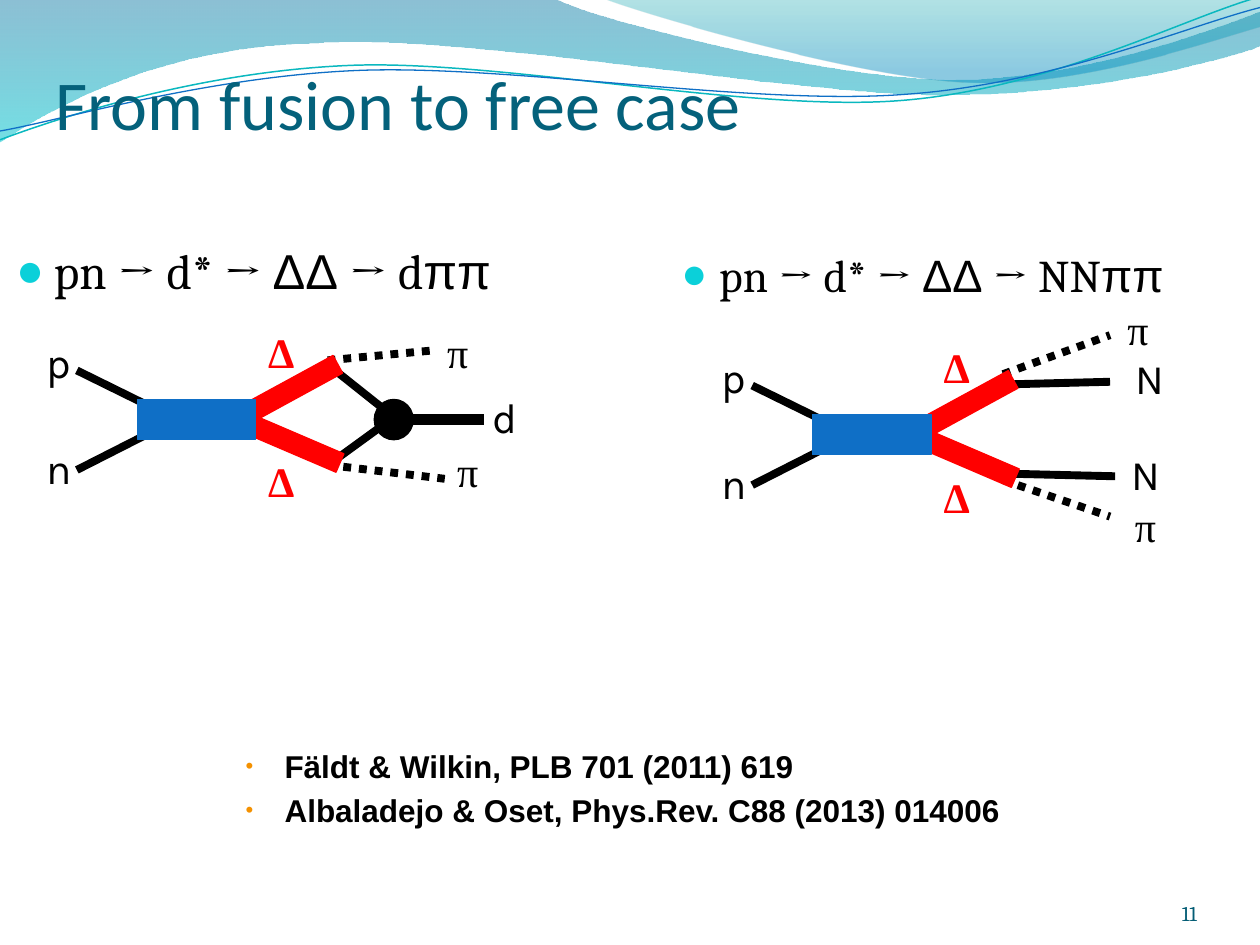
from dataclasses import dataclass

from lxml import etree
from pptx import Presentation
from pptx.dml.color import RGBColor
from pptx.enum.dml import MSO_LINE
from pptx.enum.shapes import MSO_CONNECTOR, MSO_SHAPE
from pptx.enum.text import MSO_ANCHOR, PP_ALIGN
from pptx.oxml.ns import qn
from pptx.util import Inches, Pt

STRAIGHT = MSO_CONNECTOR.STRAIGHT
RECTANGLE, OVAL = MSO_SHAPE.RECTANGLE, MSO_SHAPE.OVAL
DOTTED = MSO_LINE.ROUND_DOT
BOTTOM, TOP = MSO_ANCHOR.BOTTOM, MSO_ANCHOR.TOP
LEFT, RIGHT = PP_ALIGN.LEFT, PP_ALIGN.RIGHT
TITLE_ONLY = 5


@dataclass(frozen=True)
class Theme:
    title: str = "04617B"
    number: str = "045D75"
    ink: str = "000000"
    delta: str = "FF0000"
    vertex: str = "0F6FC6"
    teal: str = "0AB8BF"
    formula_bullet: str = "0BD0D9"
    reference_bullet: str = "F49100"
    heading_font: str = "Calibri"
    body_font: str = "Cambria"
    plain_font: str = "Arial"
    greek_font: str = "Times New Roman"
    particle_font: str = "Karla"
    title_size: float = 40
    label_size: float = 24
    reference_size: float = 18
    number_size: float = 12


THEME = Theme()

# Each wave: start point, then segments of one point (straight) or three (cubic).
WAVE_FILLS = [
    ((0, 0), [((4.4, -0.01),),
              ((4.76, 0.17), (6.64, 0.63), (7.58, 0.63)),
              ((8.53, 0.63), (9.58, 0.26), (10, 0.09)),
              ((10.01, 0.36),),
              ((9.83, 0.44), (8.7, 0.76), (7.46, 0.75)),
              ((6.22, 0.75), (3.82, 0.28), (2.57, 0.34)),
              ((1.29, 0.36), (0.46, 0.83), (-0.01, 1.13))],
     [(0, "0074A1", 45), (1, "00C6CF", 55)]),
    ((4.79, -0.01), [((5.09, 0.11), (6.82, 0.62), (7.69, 0.65)),
                     ((8.56, 0.69), (9.61, 0.32), (10, 0.21)),
                     ((10, 0),)],
     [(0, "00A1A9", 30), (0.8, "008BBF", 45)]),
]
WAVE_LINES = [
    ((0, 1.11), [((0.48, 0.93), (1.58, 0.57), (2.77, 0.52)),
                 ((3.95, 0.47), (5.93, 0.89), (7.13, 0.8)),
                 ((8.33, 0.71), (9.38, 0.15), (9.98, -0.02))], THEME.teal, 0.85),
    ((0, 1.04), [((0.47, 0.96), (1.64, 0.61), (2.83, 0.56)),
                 ((4.03, 0.51), (5.97, 0.84), (7.17, 0.75)),
                 ((8.36, 0.67), (9.41, 0.21), (10, 0.06))], THEME.vertex, 0.75),
]

# Diagram parts, in inches from the diagram's corner.
INCOMING = [(0.34, 0.4, 0.97, 0.71), (0.34, 1.19, 0.97, 0.87)]
DELTA_BARS = [(0.46, -28.6), (0.9, 23.2)]
LABEL_WIDTHS = {"Δ": 0.41, "π": 0.37}
PARTICLE_WIDTH = 0.32
FUSION = {
    "pions": [(2.33, 1.15, 3.26, 1.26), (2.33, 0.32, 3.18, 0.24)],
    "nucleons": [(2.39, 0.4, 2.78, 0.71), (2.39, 1.11, 2.94, 0.71)],
    "labels": [("d", 3.54, 0.52), ("π", 3.26, 0.95), ("π", 3.18, 0)],
}
FREE = {
    "pions": [(2.33, 1.15, 3.18, 1.44), (2.33, 0.31, 3.18, 0)],
    "nucleons": [(2.39, 0.39, 3.18, 0.37), (2.39, 1.1, 3.22, 1.12)],
    "labels": [("π", 3.28, 1.26), ("π", 3.22, -0.3), ("N", 3.25, 0.85), ("N", 3.28, 0.09)],
}


def inches(values):
    return [Inches(value) for value in values]


def write(frame, paragraphs, size, color, bold=False, align=LEFT, space=0, bullet=None):
    """Fill a frame; a paragraph is a list of (text, font), a bullet (char, colour, percent, indent)."""
    for index, spans in enumerate(paragraphs):
        para = frame.paragraphs[0] if index == 0 else frame.add_paragraph()
        para.alignment, para.space_before = align, Pt(space)
        if bullet:
            add_bullet(para, *bullet)
        for text, font in spans:
            span = para.add_run()
            span.text = text
            for name, value in {"name": font, "size": Pt(size), "bold": bold}.items():
                setattr(span.font, name, value)
            span.font.color.rgb = RGBColor.from_string(color)


def add_bullet(para, char, color, percent, indent):
    props = para._p.get_or_add_pPr()
    props.set("marL", str(Inches(indent)))
    props.set("indent", str(-Inches(indent)))
    tint = etree.SubElement(props, qn("a:buClr"))
    etree.SubElement(tint, qn("a:srgbClr"), val=color)
    etree.SubElement(props, qn("a:buSzPct"), val=str(percent * 1000))
    etree.SubElement(props, qn("a:buFont"), typeface=THEME.plain_font)
    etree.SubElement(props, qn("a:buChar"), char=char)


def add_text(page, box, paragraphs, size, color, anchor=TOP, **style):
    frame = page.shapes.add_textbox(*inches(box)).text_frame
    frame.word_wrap, frame.vertical_anchor = True, anchor
    write(frame, paragraphs, size, color, **style)
    return frame


def add_block(page, kind, box, color, rotation=0):
    block = page.shapes.add_shape(kind, *inches(box))
    block.shadow.inherit = False
    block.rotation = rotation
    block.fill.solid()
    block.fill.fore_color.rgb = block.line.color.rgb = RGBColor.from_string(color)
    block.line.width = Pt(0.75)


def add_line(page, left, top, ends, width=4.5, dash=None):
    x1, y1, x2, y2 = ends
    line = page.shapes.add_connector(STRAIGHT, *inches((left + x1, top + y1, left + x2, top + y2)))
    line.line.color.rgb = RGBColor.from_string(THEME.ink)
    line.line.width, line.line.dash_style = Pt(width), dash
    etree.SubElement(line._element.spPr, qn("a:effectLst"))


def add_wave(page, start, segments, close):
    """Draw an outline through all points, then join each group of three into one cubic."""
    builder = page.shapes.build_freeform(*inches(start))
    builder.add_line_segments([inches(point) for segment in segments for point in segment], close=close)
    wave = builder.convert_to_shape()
    wave.shadow.inherit = False
    steps = iter(list(wave._element.spPr.iter(qn("a:lnTo"))))
    for segment in segments:
        first, *others = [next(steps) for _ in segment]
        if others:
            first.tag = qn("a:cubicBezTo")
            for step in others:
                first.append(step[0])
                step.getparent().remove(step)
    return wave


def add_waves(page):
    for start, segments, stops in WAVE_FILLS:
        wave = add_wave(page, start, segments, True)
        wave.line.fill.background()
        wave.fill.gradient()
        wave.fill.gradient_angle = 270
        for stop, (position, color, _) in zip(wave.fill.gradient_stops, stops):
            stop.position, stop.color.rgb = position, RGBColor.from_string(color)
        for tint, (_, _, opacity) in zip(wave._element.spPr.iter(qn("a:srgbClr")), stops):
            etree.SubElement(tint, qn("a:alpha"), val=str(opacity * 1000))
    for start, segments, color, width in WAVE_LINES:
        wave = add_wave(page, start, segments, False)
        wave.fill.background()
        wave.line.color.rgb, wave.line.width = RGBColor.from_string(color), Pt(width)


def place_title(page, box, text):
    title = page.shapes.title
    title.element.getparent().append(title.element)
    for name, value in zip(("left", "top", "width", "height"), inches(box)):
        setattr(title, name, value)
    frame = title.text_frame
    margins = {"margin_left": 0, "margin_top": Inches(0.05), "margin_right": 0, "margin_bottom": 0}
    for name, value in {**margins, "vertical_anchor": BOTTOM, "word_wrap": True}.items():
        setattr(frame, name, value)
    write(frame, [[(text, THEME.heading_font)]], THEME.title_size, THEME.title)


def add_formula(page, box, product, size):
    spans = [("pn → d*", THEME.body_font), (" → ", THEME.body_font), ("ΔΔ", THEME.plain_font),
             (f" → {product}", THEME.body_font), ("ππ", THEME.plain_font)]
    add_text(page, box, [spans], size, THEME.ink, space=size / 5,
             bullet=("●", THEME.formula_bullet, 95, 0.3))


def add_diagram(page, left, top, decay, fused):
    for ends in decay["pions"]:
        add_line(page, left, top, ends, dash=DOTTED)
    for ends in decay["nucleons"] + INCOMING:
        add_line(page, left, top, ends)
    for offset, angle in DELTA_BARS:
        add_block(page, RECTANGLE, (left + 1.67, top + offset, 0.79, 0.16), THEME.delta, angle)
    add_block(page, RECTANGLE, (left + 0.82, top + 0.63, 0.94, 0.32), THEME.vertex)
    if fused:
        add_block(page, OVAL, (left + 2.7, top + 0.63, 0.31, 0.32), THEME.ink)
        add_line(page, left, top, (2.94, 0.79, 3.57, 0.79), width=6)
    labels = [("Δ", 1.76, 1.03), ("Δ", 1.76, 0)] + decay["labels"] + [("p", 0, 0.08), ("n", 0, 0.92)]
    for text, x, y in labels:
        is_delta = text == "Δ"
        font = THEME.greek_font if text in LABEL_WIDTHS else THEME.particle_font
        box = (left + x, top + y, LABEL_WIDTHS.get(text, PARTICLE_WIDTH), 0.5)
        add_text(page, box, [[(text, font)]], THEME.label_size,
                 THEME.delta if is_delta else THEME.ink, bold=is_delta)


def add_references(page, box):
    lines = ["Fäldt & Wilkin, PLB 701 (2011) 619", "Albaladejo & Oset, Phys.Rev. C88 (2013) 014006"]
    add_text(page, box, [[(line, THEME.plain_font)] for line in lines], THEME.reference_size,
             THEME.ink, bold=True, space=3.6, bullet=("•", THEME.reference_bullet, 70, 0.31))


def add_page_number(page, box, number):
    frame = add_text(page, box, [[(number, THEME.body_font)]], THEME.number_size, THEME.number,
                     anchor=BOTTOM, align=RIGHT)
    for side in ("left", "top", "right", "bottom"):
        setattr(frame, f"margin_{side}", 0)


def main():
    deck = Presentation()
    deck.slide_width, deck.slide_height = Inches(10), Inches(7.5)
    page = deck.slides.add_slide(deck.slide_layouts[TITLE_ONLY])
    add_waves(page)
    add_page_number(page, (8.67, 6.95, 0.83, 0.4), "11")
    place_title(page, (0.44, 0.21, 9, 0.94), "From fusion to free case")
    add_formula(page, (0.03, 1.86, 4.38, 0.63), "d", 28)
    add_diagram(page, 0.27, 2.54, FUSION, fused=True)
    add_formula(page, (5.31, 1.91, 4.38, 0.63), "NN", 25.9)
    add_diagram(page, 5.63, 2.66, FREE, fused=False)
    add_references(page, (1.85, 5.88, 6.38, 1.07))
    deck.save("out.pptx")


if __name__ == "__main__":
    main()
